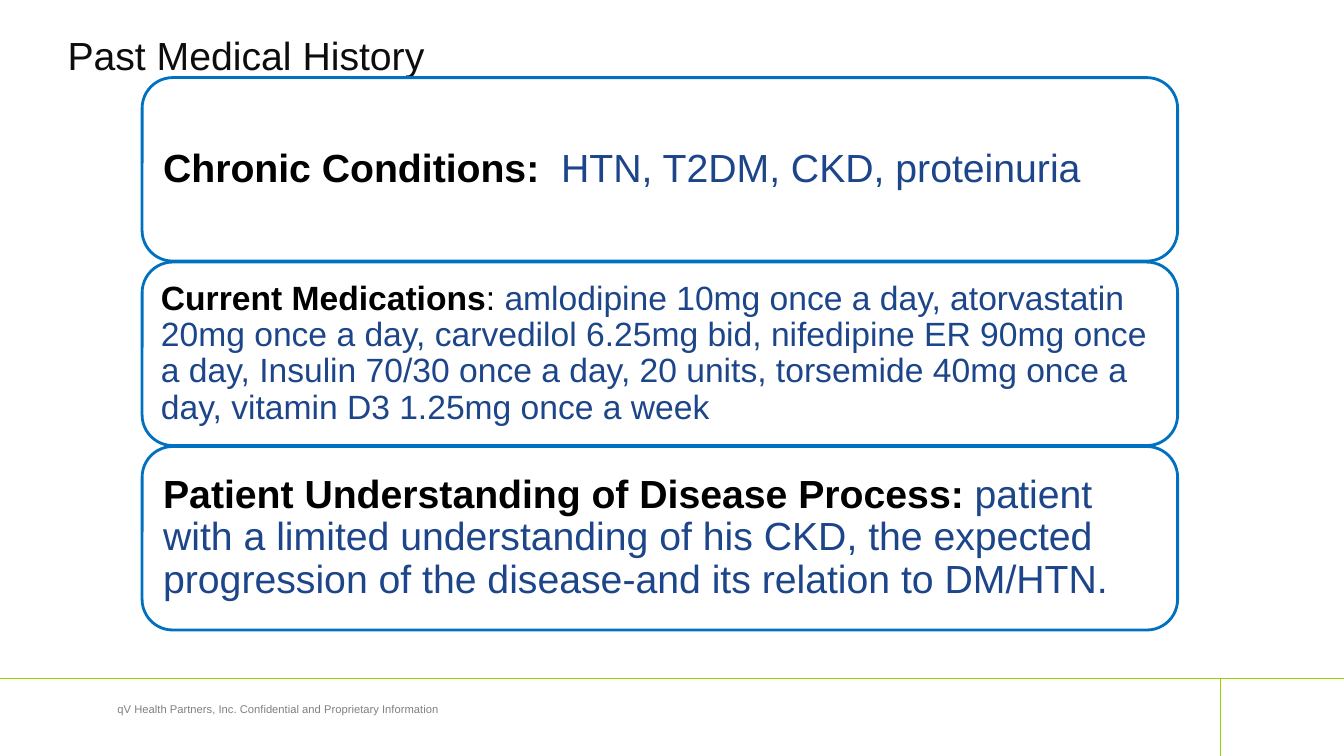
from lxml import etree
from pptx import Presentation
from pptx.dml.color import RGBColor
from pptx.enum.shapes import MSO_CONNECTOR, MSO_SHAPE
from pptx.enum.text import MSO_ANCHOR, PP_ALIGN
from pptx.oxml.ns import qn
from pptx.util import Pt

STRAIGHT = MSO_CONNECTOR.STRAIGHT
ROUNDED = MSO_SHAPE.ROUNDED_RECTANGLE
LEFT, CENTER = PP_ALIGN.LEFT, PP_ALIGN.CENTER
TOP, MIDDLE = MSO_ANCHOR.TOP, MSO_ANCHOR.MIDDLE

EMU_PER_PX = 9144  # 100 px to the inch
WIDTH, HEIGHT = 1333, 750
FONT = "Arial"
BLACK, BLUE = "000000", "1C458A"

# Each card: text size, inset, runs of (text, colour, bold)
CARDS = [
    (28, 12, [
        ("Chronic Conditions:  ", BLACK, True),
        ("HTN, T2DM, CKD, proteinuria", BLUE, False),
    ]),
    (24, 10, [
        ("Current Medications", BLACK, True),
        (": ", BLACK, False),
        ("amlodipine 10mg once a day, atorvastatin 20mg once a day, "
         "carvedilol 6.25mg bid, nifedipine ER 90mg once a day, "
         "Insulin 70/30 once a day, 20 units, torsemide 40mg once a day, "
         "vitamin D3 1.25mg once a week", BLUE, False),
    ]),
    (28, 12, [
        ("Patient Understanding of Disease Process: ", BLACK, True),
        ("patient with a limited understanding of his CKD, the expected "
         "progression of the disease-and its relation to DM/HTN.", BLUE, False),
    ]),
]


def px(*lengths):
    return [length * EMU_PER_PX for length in lengths]


def color(value):
    return RGBColor.from_string(value)


def set_text(shape, runs, size, insets, anchor, alignment=LEFT):
    """Fill the shape with one paragraph of (text, colour, bold) runs."""
    frame = shape.text_frame
    frame.word_wrap = True
    frame.vertical_anchor = anchor
    (frame.margin_left, frame.margin_top,
     frame.margin_right, frame.margin_bottom) = px(*insets)
    paragraph = frame.paragraphs[0]
    paragraph.alignment = alignment
    for text, text_color, bold in runs:
        run = paragraph.add_run()
        run.text = text
        run.font.name = FONT
        run.font.size = Pt(size)
        run.font.bold = bold
        run.font.color.rgb = color(text_color)
    return paragraph


def add_rule(slide, x1, y1, x2, y2):
    rule = slide.shapes.add_connector(STRAIGHT, *px(x1, y1, x2, y2))
    rule.line.color.rgb = color("95D600")
    rule.line.width = Pt(0.5)
    etree.SubElement(rule._element.spPr, qn("a:effectLst"))


def add_footer(slide, left, top, width, height):
    divider = left + width - 123
    add_rule(slide, divider, top + height, divider, top)
    add_rule(slide, left, top, left + width, top)
    box = slide.shapes.add_textbox(*px(left + 42, top + 19, 468, 42))
    notice = "qV Health Partners, Inc. Confidential and Proprietary Information"
    set_text(box, [(notice, "808080", False)], 8, (10, 5, 10, 5), TOP, CENTER)


def add_title(slide, left, top, width, height):
    box = slide.shapes.add_textbox(*px(left, top, width, height))
    set_text(box, [("Past Medical History", "0D0D0D", False)], 28, (0, 0, 0, 0), MIDDLE)


def add_cards(slide, left, top, width, height, gap=1):
    """Stack the cards at equal heights inside the box."""
    pitch = (height + gap) // len(CARDS)
    for index, (size, inset, runs) in enumerate(CARDS):
        card = slide.shapes.add_shape(
            ROUNDED, *px(left, top + index * pitch, width, pitch - gap))
        card.shadow.inherit = False
        card.fill.solid()
        card.fill.fore_color.rgb = color("FFFFFF")
        card.line.color.rgb = color("0070C0")
        card.line.width = Pt(2)
        paragraph = set_text(card, runs, size, (inset,) * 4, MIDDLE)
        paragraph.line_spacing = 0.9


def build_history_slide(presentation):
    slide = presentation.slides.add_slide(presentation.slide_layouts[6])
    add_footer(slide, 0, 673, WIDTH, HEIGHT - 673)
    add_title(slide, 67, 28, 950, 52)
    add_cards(slide, 141, 77, 1027, 549)


def main():
    presentation = Presentation()
    presentation.slide_width, presentation.slide_height = px(WIDTH, HEIGHT)
    build_history_slide(presentation)
    presentation.save("out.pptx")


if __name__ == "__main__":
    main()
